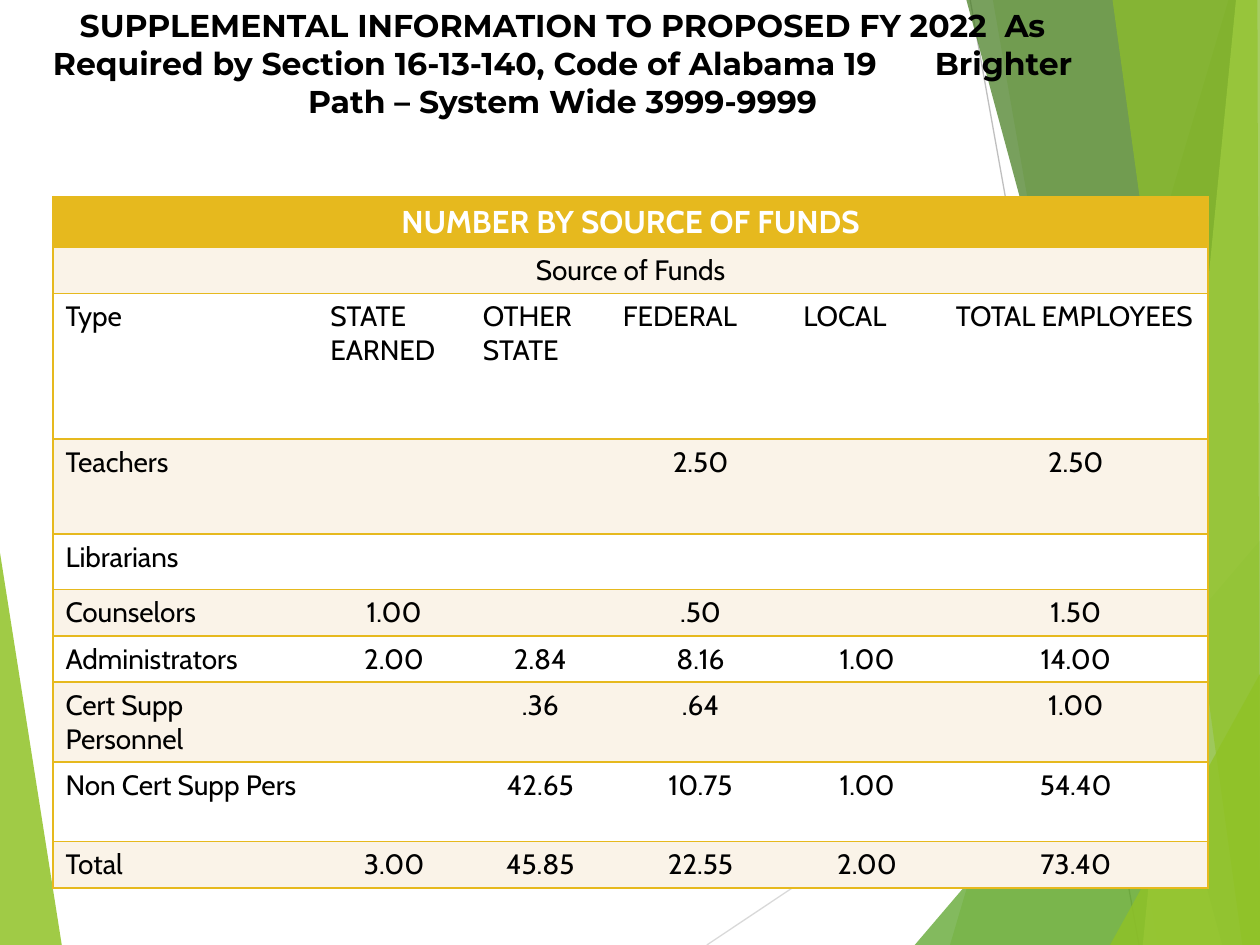
from lxml import etree
from pptx import Presentation
from pptx.dml.color import RGBColor
from pptx.enum.shapes import MSO_CONNECTOR
from pptx.enum.text import PP_ALIGN
from pptx.oxml.ns import qn
from pptx.util import Inches, Pt

LINE = MSO_CONNECTOR.STRAIGHT
LEFT, MID = PP_ALIGN.LEFT, PP_ALIGN.CENTER
WIDE, HIGH = Inches(10), Inches(7.5)

BLACK = RGBColor(0, 0, 0)
WHITE = RGBColor(0xFF, 0xFF, 0xFF)
GOLD = RGBColor(0xE6, 0xB9, 0x1E)
CREAM = RGBColor(0xFA, 0xF3, 0xE8)
LIME = RGBColor(0x90, 0xC2, 0x26)
LEAF = RGBColor(0x54, 0xA0, 0x21)
MOSS = RGBColor(0x3F, 0x78, 0x19)
PALE = RGBColor(0xC0, 0xE4, 0x74)
GREY = RGBColor(0xBF, 0xBF, 0xBF)
MIST = RGBColor(0xD9, 0xD9, 0xD9)

# Points are percent of the backdrop box: colour, start, end
RAYS = [
    (MIST, (56.1, 100), (100, 60.9)),
    (GREY, (77, 0), (90.4, 100)),
]
# Colour, opacity in percent, corners
PANES = [
    (LIME, 85, [(0, 58.5), (4.9, 100), (0, 100)]),
    (LIME, 30, [(97.5, 0), (75.4, 100), (100, 100), (100, 0)]),
    (LIME, 20, [(78.8, 0), (91.9, 100), (100, 100), (100, 0)]),
    (LEAF, 72, [(72.6, 100), (100, 57.2), (100, 100)]),
    (MOSS, 70, [(76.7, 0), (97, 100), (100, 100), (100, 0)]),
    (PALE, 70, [(98.1, 0), (90.7, 100), (100, 100), (100, 0)]),
    (LIME, 65, [(88.3, 0), (98.6, 100), (100, 100), (99.8, 0)]),
    (LIME, 80, [(88.1, 100), (100, 71.3), (100, 100)]),
]

TITLE = ("SUPPLEMENTAL INFORMATION TO PROPOSED FY 2022  As Required by "
         "Section 16-13-140, Code of Alabama 19\tBrighter Path – "
         "System Wide 3999-9999")

# Column widths and row heights in hundredths of an inch, used as ratios
COLS = [210, 121, 111, 143, 121, 210]
ROWS = [40, 36, 115, 75, 44, 36, 36, 63, 63, 36]
BANDS = ["NUMBER BY SOURCE OF FUNDS", "Source of Funds"]
DATA = [
    ["Type", "STATE\nEARNED", "OTHER STATE", "FEDERAL", "LOCAL",
     "TOTAL EMPLOYEES"],
    ["Teachers", "", "", "2.50", "", "2.50"],
    ["Librarians", "", "", "", "", ""],
    ["Counselors", "1.00", "", ".50", "", "1.50"],
    ["Administrators", "2.00", "2.84", "8.16", "1.00", "14.00"],
    ["Cert Supp Personnel", "", ".36", ".64", "", "1.00"],
    ["Non Cert Supp Pers", "", "42.65", "10.75", "1.00", "54.40"],
    ["Total", "3.00", "45.85", "22.55", "2.00", "73.40"],
]


def share(left, top, wide, high):
    """Turn percent of the slide into a box of lengths."""
    return [int(WIDE * left / 100), int(HIGH * top / 100),
            int(WIDE * wide / 100), int(HIGH * high / 100)]


def style(par, face, size, color, bold, align):
    par.alignment = align
    par.font.name, par.font.size = face, Pt(size)
    par.font.color.rgb, par.font.bold = color, bold


def add_back(slide, box):
    left, top, wide, high = box

    def spot(point):
        return (int(left + wide * point[0] / 100),
                int(top + high * point[1] / 100))

    # Thin rays
    for color, start, end in RAYS:
        ray = slide.shapes.add_connector(LINE, *spot(start), *spot(end))
        ray.line.color.rgb, ray.line.width = color, Pt(0.75)
        etree.SubElement(ray._element.spPr, qn("a:effectLst"))

    # Clear panes
    for color, alpha, points in PANES:
        first, *rest = map(spot, points)
        form = slide.shapes.build_freeform(*first)
        form.add_line_segments(rest, close=True)
        pane = form.convert_to_shape()
        pane.shadow.inherit = False
        pane.line.fill.background()
        pane.fill.solid()
        pane.fill.fore_color.rgb = color
        tint = pane._element.spPr.find(".//" + qn("a:srgbClr"))
        etree.SubElement(tint, qn("a:alpha"), val=str(alpha * 1000))


def add_title(slide, box):
    frame = slide.shapes.add_textbox(*box).text_frame
    frame.word_wrap = True
    frame.text = TITLE
    style(frame.paragraphs[0], "Montserrat", 18, BLACK, True, MID)


def edge(cell, sides):
    """Draw gold borders on the named sides and none on the others."""
    props = cell._tc.get_or_add_tcPr()
    for spot, side in enumerate("LRTB"):
        line = etree.Element(qn("a:ln" + side), w=str(Pt(1)))
        if side in sides:
            fill = etree.SubElement(line, qn("a:solidFill"))
            etree.SubElement(fill, qn("a:srgbClr"), val=str(GOLD))
        else:
            etree.SubElement(line, qn("a:noFill"))
        props.insert(spot, line)


def add_grid(slide, box):
    wide, high = box[2:]
    grid = slide.shapes.add_table(len(ROWS), len(COLS), *box).table
    for col, part in zip(grid.columns, COLS):
        col.width = int(wide * part / sum(COLS))
    for row, part in zip(grid.rows, ROWS):
        row.height = int(high * part / sum(ROWS))

    # The two bands span every column
    last = len(COLS) - 1
    for r in range(len(BANDS)):
        grid.cell(r, 0).merge(grid.cell(r, last))
    texts = [[band] + [""] * last for band in BANDS] + DATA

    for r, row in enumerate(texts):
        head, band = r == 0, r < len(BANDS)
        back = GOLD if head else CREAM if r % 2 else WHITE
        for c, text in enumerate(row):
            cell = grid.cell(r, c)
            cell.text = text
            cell.fill.solid()
            cell.fill.fore_color.rgb = back
            number = c > 0 and r > len(BANDS)
            for par in cell.text_frame.paragraphs:
                style(par, "Cabin", 18 if head else 16,
                      WHITE if head else BLACK, head,
                      MID if band or number else LEFT)
            edge(cell, "TB" + "L" * (band or c == 0)
                 + "R" * (band or c == last))


def main():
    deck = Presentation()
    deck.slide_width, deck.slide_height = WIDE, HIGH
    slide = deck.slides.add_slide(deck.slide_layouts[6])
    add_back(slide, share(0, 0, 100, 100))
    add_title(slide, share(1.7, 0, 85.9, 17.5))
    add_grid(slide, share(4.2, 20.8, 91.7, 72.9))
    deck.save("out.pptx")


if __name__ == "__main__":
    main()
